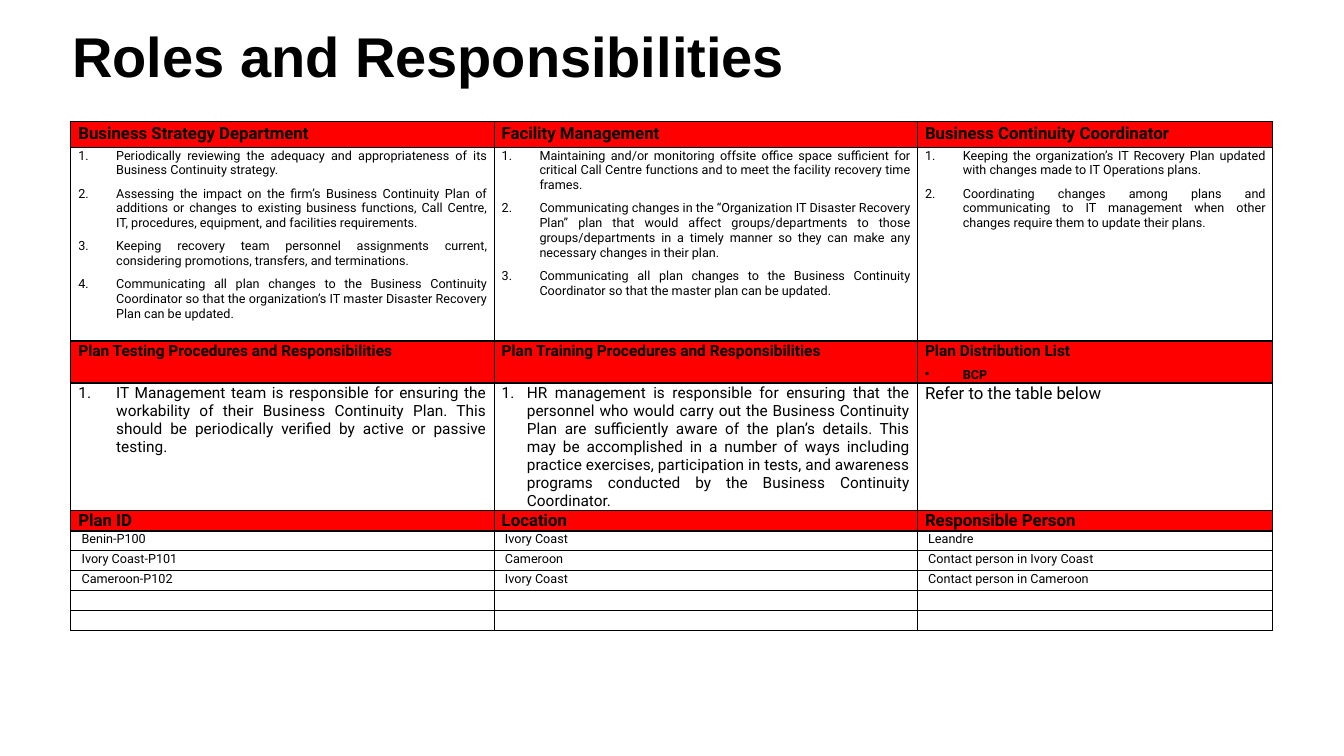
"""Build the Roles and Responsibilities slide with its planning table."""
from dataclasses import dataclass

from lxml.etree import SubElement
from pptx import Presentation
from pptx.dml.color import RGBColor
from pptx.enum.text import PP_ALIGN
from pptx.oxml.ns import qn
from pptx.util import Pt

BLACK = RGBColor(0, 0, 0)
RED = RGBColor(255, 0, 0)
COLUMN_WIDTHS = (302.4, 302.4, 253.8)
ROW_HEIGHTS = (18.4, 138.2, 29.9, 91) + (14.2,) * 6
NUMBERED, DOTTED = "buAutoNum", "buChar"
MARKER_SETTINGS = {NUMBERED: ("type", "arabicPeriod"), DOTTED: ("char", "•")}


@dataclass(frozen=True)
class Entry:
    text: str
    size: float
    bold: bool = False
    marker: str = ""
    indent: float = 0
    spacing: float = 1.0
    align: PP_ALIGN = PP_ALIGN.JUSTIFY


@dataclass(frozen=True)
class Row:
    cells: tuple[tuple[Entry, ...], ...]
    header: bool = False


def duties(*texts: str, size: float = 9, indent: float = 27) -> tuple[Entry, ...]:
    return tuple(Entry(text, size, marker=NUMBERED, indent=indent) for text in texts)


def headings(*texts: str, size: float = 12, spacing: float = 1.0) -> Row:
    return Row(tuple((Entry(text, size, True, spacing=spacing, align=PP_ALIGN.LEFT),)
                     for text in texts), True)


def plan(*texts: str) -> Row:
    return Row(tuple((Entry(text, 9, indent=2.3),) for text in texts))


PROCEDURES = headings("Plan Testing Procedures and Responsibilities",
                      "Plan Training Procedures and Responsibilities",
                      "Plan Distribution List", size=11)
TESTING, TRAINING, DISTRIBUTION = PROCEDURES.cells

ROWS = (
    headings("Business Strategy Department", "Facility Management",
             "Business Continuity Coordinator", spacing=1.07),
    Row((
        duties(
            "Periodically reviewing the adequacy and appropriateness of its Business "
            "Continuity strategy.",
            "Assessing the impact on the firm’s Business Continuity Plan of additions or "
            "changes to existing business functions, Call Centre, IT, procedures, "
            "equipment, and facilities requirements.",
            "Keeping recovery team personnel assignments current, considering "
            "promotions, transfers, and terminations.",
            "Communicating all plan changes to the Business Continuity Coordinator so "
            "that the organization’s IT master Disaster Recovery Plan can be updated.",
        ),
        duties(
            "Maintaining and/or monitoring offsite office space sufficient for critical "
            "Call Centre functions and to meet the facility recovery time frames.",
            "Communicating changes in the “Organization IT Disaster Recovery Plan” plan "
            "that would affect groups/departments to those groups/departments in a "
            "timely manner so they can make any necessary changes in their plan.",
            "Communicating all plan changes to the Business Continuity Coordinator so "
            "that the master plan can be updated.",
        ),
        duties(
            "Keeping the organization’s IT Recovery Plan updated with changes made to IT "
            "Operations plans.",
            "Coordinating changes among plans and communicating to IT management when "
            "other changes require them to update their plans.",
        ),
    )),
    Row((TESTING, TRAINING, DISTRIBUTION + (Entry("BCP", 9, True, DOTTED, 27),)), True),
    Row((
        duties(
            "IT Management team is responsible for ensuring the workability of their "
            "Business Continuity Plan. This should be periodically verified by active "
            "or passive testing.", size=11),
        duties(
            "HR management is responsible for ensuring that the personnel who would "
            "carry out the Business Continuity Plan are sufficiently aware of the plan’s "
            "details. This may be accomplished in a number of ways including practice "
            "exercises, participation in tests, and awareness programs conducted by the "
            "Business Continuity Coordinator.", size=11, indent=18),
        (Entry("Refer to the table below", 12, align=PP_ALIGN.LEFT),),
    )),
    headings("Plan ID", "Location", "Responsible Person"),
    plan("Benin-P100", "Ivory Coast", "Leandre"),
    plan("Ivory Coast-P101", "Cameroon", "Contact person in Ivory Coast"),
    plan("Cameroon-P102", "Ivory Coast", "Contact person in Cameroon"),
    plan("", "", ""),
    plan("", "", ""),
)


def style_font(font, name: str, size: float, bold: bool) -> None:
    font.name, font.size, font.bold = name, Pt(size), bold
    font.color.rgb = BLACK


def write_entry(paragraph, entry: Entry, first: bool) -> None:
    paragraph.text = entry.text
    paragraph.alignment = entry.align
    paragraph.line_spacing = entry.spacing
    if not first:
        paragraph.space_before = Pt(6)
    properties = paragraph._p.get_or_add_pPr()
    properties.set("marL", str(Pt(entry.indent)))
    if entry.marker:
        properties.set("indent", str(-Pt(entry.indent)))
        key, value = MARKER_SETTINGS[entry.marker]
        SubElement(properties, qn(f"a:{entry.marker}")).set(key, value)
    for run in paragraph.runs:
        style_font(run.font, "Roboto", entry.size, entry.bold)
    if not entry.text:
        SubElement(paragraph._p, qn("a:endParaRPr")).set("sz", str(int(entry.size * 100)))


def add_borders(cell) -> None:
    properties = cell._tc.get_or_add_tcPr()
    for side in ("lnL", "lnR", "lnT", "lnB"):
        line = SubElement(properties, qn(f"a:{side}"), w=str(Pt(1)))
        fill = SubElement(line, qn("a:solidFill"))
        SubElement(fill, qn("a:srgbClr"), val=str(BLACK))


def fill_cell(cell, entries: tuple[Entry, ...], header: bool) -> None:
    cell.margin_left = cell.margin_right = Pt(5.4)
    cell.margin_top, cell.margin_bottom = Pt(0.6), Pt(0)
    add_borders(cell)
    if header:
        cell.fill.solid()
        cell.fill.fore_color.rgb = RED
    else:
        cell.fill.background()
    frame = cell.text_frame
    for index, entry in enumerate(entries):
        paragraph = frame.add_paragraph() if index else frame.paragraphs[0]
        write_entry(paragraph, entry, index == 0)


def add_title(slide) -> None:
    frame = slide.shapes.add_textbox(Pt(44.6), Pt(15.5), Pt(828), Pt(46)).text_frame
    frame.word_wrap = True
    frame.margin_top = frame.margin_bottom = Pt(0)
    frame.text = "Roles and Responsibilities"
    style_font(frame.paragraphs[0].runs[0].font, "Arial", 40, True)


def add_roles(slide) -> None:
    roles = slide.shapes.add_table(
        len(ROWS), len(COLUMN_WIDTHS), Pt(50.6), Pt(87),
        Pt(sum(COLUMN_WIDTHS)), Pt(sum(ROW_HEIGHTS))).table
    roles.first_row = roles.horz_banding = False
    for column, width in zip(roles.columns, COLUMN_WIDTHS):
        column.width = Pt(width)
    for table_row, height, row in zip(roles.rows, ROW_HEIGHTS, ROWS):
        table_row.height = Pt(height)
        for cell, entries in zip(table_row.cells, row.cells):
            fill_cell(cell, entries, row.header)


def main() -> None:
    deck = Presentation()
    deck.slide_width, deck.slide_height = Pt(960), Pt(540)
    slide = deck.slides.add_slide(deck.slide_layouts[6])
    add_roles(slide)
    add_title(slide)
    deck.save("out.pptx")


if __name__ == "__main__":
    main()
